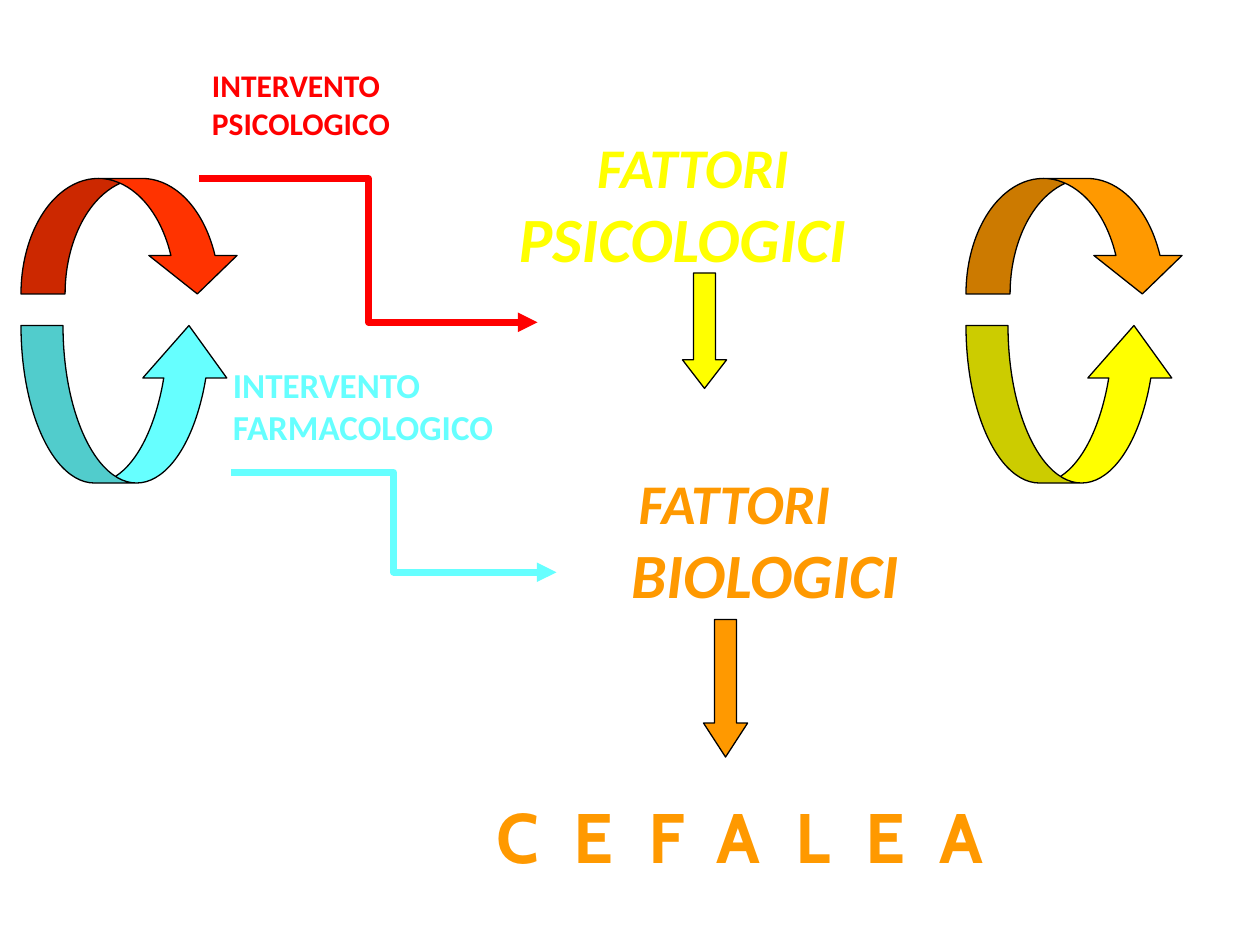
from collections import namedtuple

from lxml.etree import SubElement
from pptx import Presentation
from pptx.dml.color import RGBColor
from pptx.enum.shapes import MSO_CONNECTOR as Link, MSO_SHAPE as Shape
from pptx.enum.text import PP_ALIGN as Align
from pptx.oxml.ns import qn
from pptx.util import Inches, Pt

COLORS = {
    "red": "FF0000",
    "scarlet": "FF3300",
    "cyan": "66FFFF",
    "yellow": "FFFF00",
    "orange": "FF9900",
    "black": "000000",
}
Box = namedtuple("Box", "left top width height")
Line = namedtuple("Line", "text size indent", defaults=(0,))


def grid(cells):
    """The slide is a grid of 120 columns by 90 rows, twelve to the inch."""
    return Inches(cells / 12)


def color(name):
    return RGBColor.from_string(COLORS[name])


def add_text(page, box, lines, tint, font="Calibri", align=Align.LEFT, italic=None, spacing=0):
    frame = page.shapes.add_textbox(*map(grid, box)).text_frame
    frame.word_wrap = True
    frame.text = "\n".join(line.text for line in lines)
    for para, line in zip(frame.paragraphs, lines):
        para.alignment = align
        if line.indent:  # a positive indent narrows the left, a negative one the right
            side = "marL" if line.indent > 0 else "marR"
            para._p.get_or_add_pPr().set(side, str(grid(abs(line.indent))))
        span = para.runs[0].font
        span.name, span.size = font, Pt(line.size)
        span.bold, span.italic = True, italic
        span.color.rgb = color(tint)
        if spacing:
            span._element.set("spc", str(spacing * 100))


def add_arrow(page, kind, box, tint, adjustments):
    arrow = page.shapes.add_shape(kind, *map(grid, box))
    arrow.shadow.inherit = False
    arrow.fill.solid()
    arrow.fill.fore_color.rgb = color(tint)
    arrow.line.color.rgb = color("black")
    arrow.line.width = Pt(0.75)
    for index, value in enumerate(adjustments):
        arrow.adjustments[index] = value


def add_elbow(page, box, tint):
    ends = (box.left, box.top, box.left + box.width, box.top + box.height)
    elbow = page.shapes.add_connector(Link.ELBOW, *map(grid, ends))
    elbow.line.color.rgb = color(tint)
    elbow.line.width = Pt(3.75)
    SubElement(elbow.line._get_or_add_ln(), qn("a:tailEnd"), type="triangle")
    SubElement(elbow._element.spPr, qn("a:effectLst"))


def add_loop(page, box, upper, lower):
    """Two curved arrows that face each other."""
    left, top, width, height = box
    add_arrow(page, Shape.CURVED_DOWN_ARROW, Box(left, top, width, height * 11 / 29),
              upper, (0.382, 0.764, 0.333))
    add_arrow(page, Shape.CURVED_UP_ARROW,
              Box(left, top + height * 14 / 29, width * 20 / 21, height * 15 / 29),
              lower, (0.267, 0.533, 0.333))


def add_factor(page, box, lines, tint, arrow_box, adjustments):
    """A heading with the arrow below it, placed relative to the heading."""
    add_text(page, box, lines, tint, align=Align.CENTER, italic=True)
    arrow_box = arrow_box._replace(left=box.left + arrow_box.left, top=box.top + arrow_box.top)
    add_arrow(page, Shape.DOWN_ARROW, arrow_box, tint, adjustments)


def add_intervention(page, box, second_word, size, tint, elbow_box):
    """A label with the bent arrow below it, placed relative to the label."""
    add_text(page, box, [Line("INTERVENTO", size), Line(second_word, size)], tint)
    elbow_box = elbow_box._replace(left=box.left + elbow_box.left, top=box.top + elbow_box.top)
    add_elbow(page, elbow_box, tint)


def main():
    deck = Presentation()
    deck.slide_width, deck.slide_height = grid(120), grid(90)
    page = deck.slides.add_slide(deck.slide_layouts[6])

    # Outcome
    add_text(page, Box(43, 75, 55, 8.2), [Line("CEFALEA", 40)], "orange",
             font="Cabin", align=Align.CENTER, spacing=20)

    # Chain of factors
    add_factor(page, Box(46.8, 44, 45.2, 14.8),
               [Line("FATTORI", 32, 1.1), Line("BIOLOGICI", 36, 6.9)], "orange",
               Box(20.2, 15, 4.2, 13.1), (0.5, 0.77))
    add_factor(page, Box(44, 12, 43.1, 14.8),
               [Line("FATTORI", 32, 0.9), Line("PSICOLOGICI", 36, -1.1)], "yellow",
               Box(21, 14, 4.2, 11), (0.5, 0.647))

    # Interventions
    add_intervention(page, Box(21, 34, 34, 9.2), "FARMACOLOGICO", 20, "cyan",
                     Box(1, 11, 31, 9.5))
    add_intervention(page, Box(19, 5.7, 23.6, 8.4), "PSICOLOGICO", 18, "red",
                     Box(0, 11.3, 32.2, 13.7))

    # Feedback loops
    add_loop(page, Box(92, 17, 21, 29), "orange", "yellow")
    add_loop(page, Box(2, 17, 21, 29), "scarlet", "cyan")

    deck.save("out.pptx")


if __name__ == "__main__":
    main()
